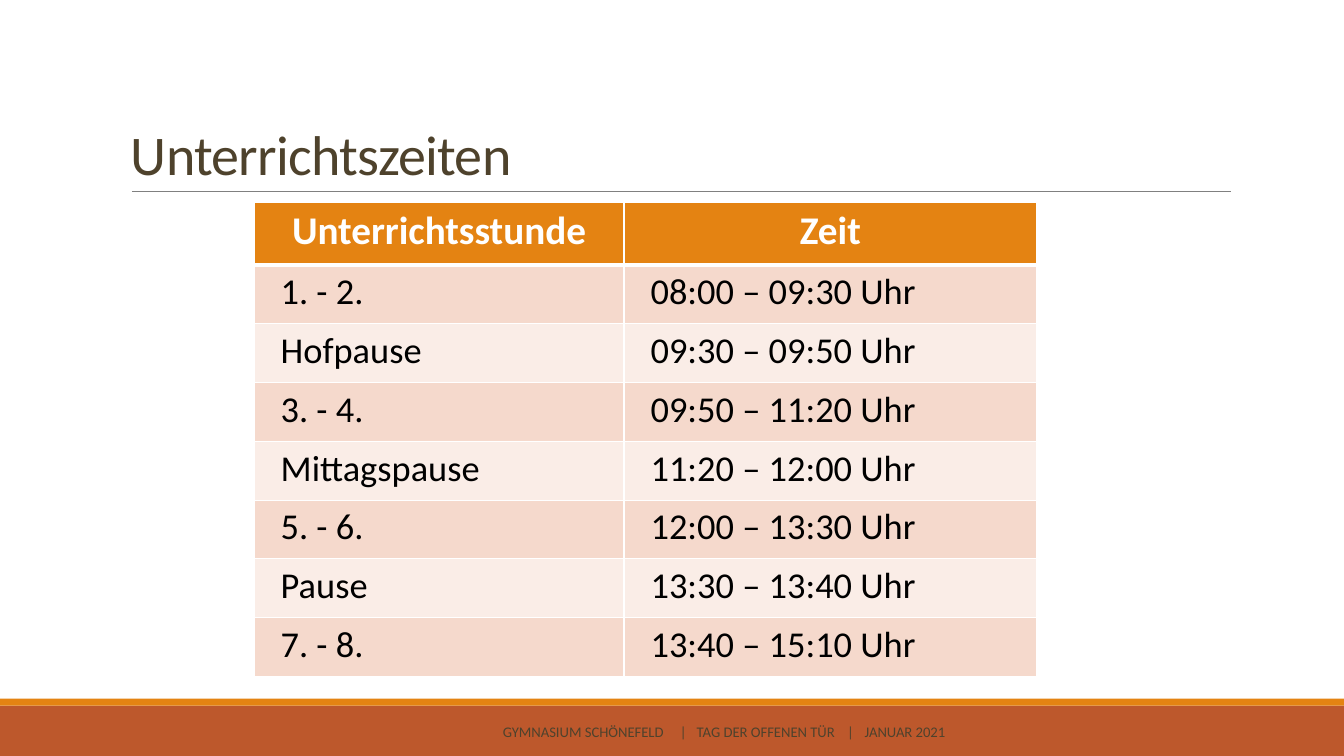
"""Builds the slide with the lesson times of the school day."""
from lxml import etree
from pptx import Presentation
from pptx.dml.color import RGBColor
from pptx.enum import shapes, text
from pptx.oxml import ns
from pptx.util import Pt

TITLE = "Unterrichtszeiten"
HEADER = ("Unterrichtsstunde", "Zeit")
LESSONS = [
    ("1. - 2.", "08:00 – 09:30 Uhr"),
    ("Hofpause", "09:30 – 09:50 Uhr"),
    ("3. - 4.", "09:50 – 11:20 Uhr"),
    ("Mittagspause", "11:20 – 12:00 Uhr"),
    ("5. - 6.", "12:00 – 13:30 Uhr"),
    ("Pause", "13:30 – 13:40 Uhr"),
    ("7. - 8.", "13:40 – 15:10 Uhr"),
]
FOOTER = ("GYMNASIUM SCHÖNEFELD", "|", "TAG DER OFFENEN TÜR", "|", "JANUAR 2021")
FOOTER_TABS = (126.5, 138.5, 246, 258.5)

FONT = "Calibri"
WHITE = RGBColor(0xFF, 0xFF, 0xFF)
BLACK = RGBColor(0x00, 0x00, 0x00)
BROWN = RGBColor(0x4E, 0x42, 0x2C)
GRAY = RGBColor(0x80, 0x80, 0x80)
RUST = RGBColor(0xBD, 0x58, 0x2C)
ORANGE = RGBColor(0xE4, 0x83, 0x12)
BANDS = (RGBColor(0xF5, 0xD9, 0xCC), RGBColor(0xFA, 0xED, 0xE7))

WIDTH, HEIGHT = 960, 540
TABLE_LEFT, TABLE_TOP = 181.5, 144.7
COLUMNS = (264.25, 294.75)
HEADER_HEIGHT, ROW_HEIGHT = 44.6, 42


def put_text(tf, content, size, color, bold=False, align=text.PP_ALIGN.LEFT,
             spacing=None, tracking=None, tabs=()):
    """Write one formatted paragraph into a text frame."""
    p = tf.paragraphs[0]
    p.alignment = align
    if spacing:
        p.line_spacing = spacing
    if tabs:
        stops = etree.SubElement(p._p.get_or_add_pPr(), ns.qn("a:tabLst"))
        for stop in tabs:
            etree.SubElement(stops, ns.qn("a:tab"), pos=str(Pt(stop)), algn="l")
    r = p.add_run()
    r.text = content
    r.font.name, r.font.size, r.font.bold = FONT, Pt(size), bold
    r.font.color.rgb = color
    if tracking:
        r.font._element.set("spc", str(int(tracking * 100)))


def add_box(s, left, top, width, height, anchor, inset=7.2):
    """Add a wrapping text box and return its text frame."""
    tf = s.shapes.add_textbox(Pt(left), Pt(top), Pt(width), Pt(height)).text_frame
    tf.word_wrap = True
    tf.vertical_anchor = anchor
    tf.margin_left = Pt(inset)
    return tf


def add_bar(s, top, height, color):
    """Add a full-width bar."""
    sp = s.shapes.add_shape(shapes.MSO_SHAPE.RECTANGLE, 0, Pt(top), Pt(WIDTH), Pt(height))
    sp.shadow.inherit = False
    sp.fill.solid()
    sp.fill.fore_color.rgb = color
    sp.line.fill.background()


def add_rule(s, left, right, y):
    """Add the thin line below the title."""
    line = s.shapes.add_connector(shapes.MSO_CONNECTOR.STRAIGHT,
                                  Pt(left), Pt(y), Pt(right), Pt(y))
    line.line.color.rgb = GRAY
    line.line.width = Pt(0.5)
    etree.SubElement(line._element.spPr, ns.qn("a:effectLst"))


def set_borders(cell, top, bottom):
    """Give a cell white borders, with top and bottom widths in points."""
    tc_pr = cell._tc.get_or_add_tcPr()
    for side, width in (("L", 1), ("R", 1), ("T", top), ("B", bottom)):
        ln = etree.SubElement(tc_pr, ns.qn("a:ln" + side), w=str(Pt(width)))
        fill = etree.SubElement(ln, ns.qn("a:solidFill"))
        etree.SubElement(fill, ns.qn("a:srgbClr"), val=str(WHITE))


def add_timetable(s):
    """Add the table of lessons and times."""
    rows = [HEADER] + LESSONS
    heights = [HEADER_HEIGHT] + [ROW_HEIGHT] * len(LESSONS)
    table = s.shapes.add_table(len(rows), len(COLUMNS), Pt(TABLE_LEFT), Pt(TABLE_TOP),
                               Pt(sum(COLUMNS)), Pt(sum(heights))).table
    table.horz_banding = False
    for column, width in zip(table.columns, COLUMNS):
        column.width = Pt(width)
    for i, (row, height) in enumerate(zip(rows, heights)):
        table.rows[i].height = Pt(height)
        for j, content in enumerate(row):
            cell = table.cell(i, j)
            set_borders(cell, top=3 if i == 1 else 1, bottom=3 if i == 0 else 1)
            cell.fill.solid()
            if i == 0:
                cell.fill.fore_color.rgb = ORANGE
                put_text(cell.text_frame, content, 28, WHITE, bold=True,
                         align=text.PP_ALIGN.CENTER)
            else:
                cell.fill.fore_color.rgb = BANDS[(i - 1) % 2]
                cell.margin_left = Pt(19)
                put_text(cell.text_frame, content, 26, BLACK)


def main():
    """Build and save the slide."""
    prs = Presentation()
    prs.slide_width, prs.slide_height = Pt(WIDTH), Pt(HEIGHT)
    s = prs.slides.add_slide(prs.slide_layouts[6])
    add_bar(s, 504, 36, RUST)
    add_bar(s, 499, 5, ORANGE)
    add_rule(s, 94.3, 879, 136.8)
    title = add_box(s, 86.4, 22.3, 792, 114.5, text.MSO_ANCHOR.BOTTOM)
    put_text(title, TITLE, 40, BROWN, spacing=0.85, tracking=-0.5)
    add_timetable(s)
    footer = add_box(s, 290.2, 508.3, 455.8, 28.8, text.MSO_ANCHOR.MIDDLE, inset=69)
    put_text(footer, "\t".join(FOOTER), 10.5, BROWN, tabs=FOOTER_TABS)
    prs.save("out.pptx")


if __name__ == "__main__":
    main()
